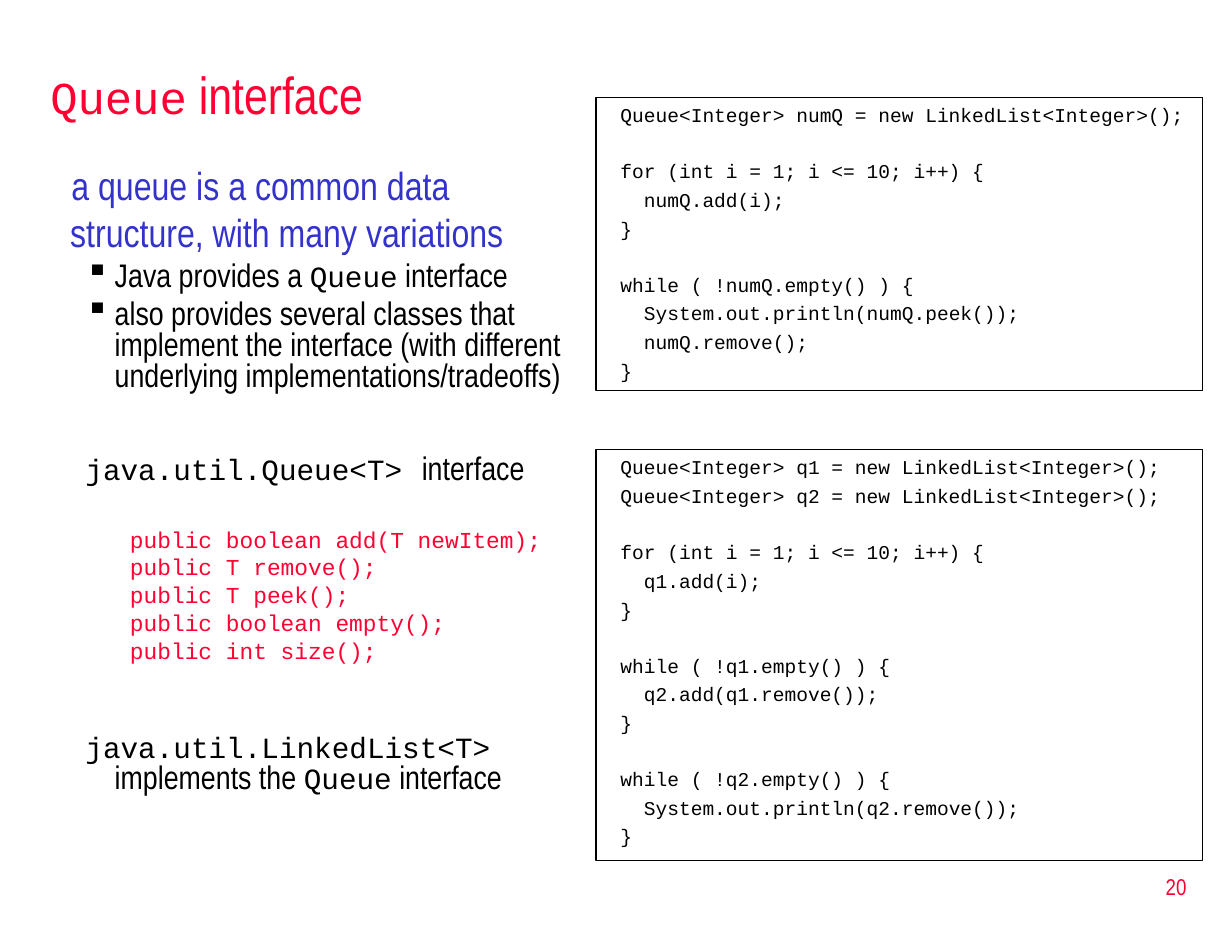
from dataclasses import dataclass

import pptx
import pptx.dml.color
import pptx.enum.shapes
import pptx.enum.text
import pptx.oxml
import pptx.oxml.ns
import pptx.util

Inches = pptx.util.Inches
Pt = pptx.util.Pt
ALIGN = pptx.enum.text.PP_ALIGN
ANCHOR = pptx.enum.text.MSO_ANCHOR

HUES = {"red": "FF0033", "blue": "3333CC", "black": "000000"}
SANS = "Arial Narrow"
MONO = "Courier New"


@dataclass
class Run:
    text: str
    size: float
    font: str = SANS
    hue: str = "black"


@dataclass
class Para:
    runs: list[Run]
    left: float = 0
    first: float = 0
    before: float = 0
    lines: float = 1
    mark: str = ""
    align: ALIGN = ALIGN.LEFT


@dataclass
class Code:
    top: float
    height: float
    text: str


def tint(hue: str) -> pptx.dml.color.RGBColor:
    return pptx.dml.color.RGBColor.from_string(HUES[hue])


def fill_frame(frame, paras: list[Para], anchor: ANCHOR = ANCHOR.TOP) -> None:
    frame.word_wrap = True
    frame.vertical_anchor = anchor
    for num, item in enumerate(paras):
        para = frame.add_paragraph() if num else frame.paragraphs[0]
        para.alignment = item.align
        para.space_before = Pt(item.before)
        para.line_spacing = item.lines
        props = para._p.get_or_add_pPr()
        props.set("marL", str(Inches(item.left)))
        props.set("indent", str(Inches(item.first)))
        if item.mark:
            mark = pptx.oxml.parse_xml(
                f'<a:buChar {pptx.oxml.ns.nsdecls("a")} char="{item.mark}"/>')
            props.append(mark)
        for part in item.runs:
            run = para.add_run()
            run.text = part.text
            run.font.size = Pt(part.size)
            run.font.name = part.font
            run.font.color.rgb = tint(part.hue)


def add_text(slide, box: tuple, paras: list[Para], anchor: ANCHOR = ANCHOR.TOP) -> None:
    shape = slide.shapes.add_textbox(*map(Inches, box))
    fill_frame(shape.text_frame, paras, anchor)


def code_paras(text: str) -> list[Para]:
    paras = []
    gap = 3.2
    for line in text.strip().splitlines():
        if not line:
            gap += 16.8
            continue
        code = line.lstrip()
        left = 0.11 + 0.1 * (len(line) - len(code))
        paras.append(Para([Run(code, 12, MONO)], left, before=gap))
        gap = 3.2
    return paras


def add_code(slide, code: Code) -> None:
    kind = pptx.enum.shapes.MSO_SHAPE.RECTANGLE
    box = (5.08, code.top, 5.17, code.height)
    shape = slide.shapes.add_shape(kind, *map(Inches, box))
    shape.shadow.inherit = False
    shape.fill.background()
    shape.line.color.rgb = tint("black")
    shape.line.width = Pt(0.75)
    fill_frame(shape.text_frame, code_paras(code.text))


def item(runs: list[Run], before: float = 4, mark: str = "") -> Para:
    return Para(runs, 0.38, -0.25, before, 0.8, mark)


CODES = [
    Code(0.83, 2.5, """
Queue<Integer> numQ = new LinkedList<Integer>();

for (int i = 1; i <= 10; i++) {
  numQ.add(i);
}

while ( !numQ.empty() ) {
  System.out.println(numQ.peek());
  numQ.remove();
}
"""),
    Code(3.83, 3.5, """
Queue<Integer> q1 = new LinkedList<Integer>();
Queue<Integer> q2 = new LinkedList<Integer>();

for (int i = 1; i <= 10; i++) {
  q1.add(i);
}

while ( !q1.empty() ) {
  q2.add(q1.remove());
}

while ( !q2.empty() ) {
  System.out.println(q2.remove());
}
"""),
]

CALLS = [
    "public boolean add(T newItem);",
    "public T remove();",
    "public T peek();",
    "public boolean empty();",
    "public int size();",
]

BODY = [
    Para([Run("a queue is a common data structure, with many variations", 24, hue="blue")],
         0, 0.01, 4.8),
    item([Run("Java provides a ", 20), Run("Queue", 18, MONO), Run(" interface", 20)],
         mark="▪"),
    item([Run("also provides several classes that implement the interface "
              "(with different underlying implementations/tradeoffs)", 20)], mark="▪"),
    item([Run("java.util.Queue<T>", 18, MONO), Run(" ", 20, MONO), Run("interface", 20)],
         before=37.6),
    *(Para([Run(call, 14, MONO, "red")], 0.51, 0, 3.6 if num else 26.9, 0.8)
      for num, call in enumerate(CALLS)),
    item([Run("java.util.LinkedList<T>", 18, MONO), Run(" ", 20, MONO),
          Run("implements the ", 20), Run("Queue", 18, MONO), Run(" interface", 20)],
         before=42.9),
]


def main() -> None:
    deck = pptx.Presentation()
    deck.slide_width = Inches(10.5)
    deck.slide_height = Inches(8)
    slide = deck.slides.add_slide(deck.slide_layouts[6])
    add_text(slide, (8.02, 7.29, 2.19, 0.53),
             [Para([Run("20", 14, hue="red")], align=ALIGN.RIGHT)], ANCHOR.MIDDLE)
    title = [Run("Queue", 28, MONO, "red"), Run(" interface", 32, hue="red")]
    add_text(slide, (0.33, 0.42, 9.92, 0.75), [Para(title)], ANCHOR.MIDDLE)
    add_text(slide, (0.5, 1.33, 4.5, 6.33), BODY)
    for code in CODES:
        add_code(slide, code)
    deck.save("out.pptx")


if __name__ == "__main__":
    main()
